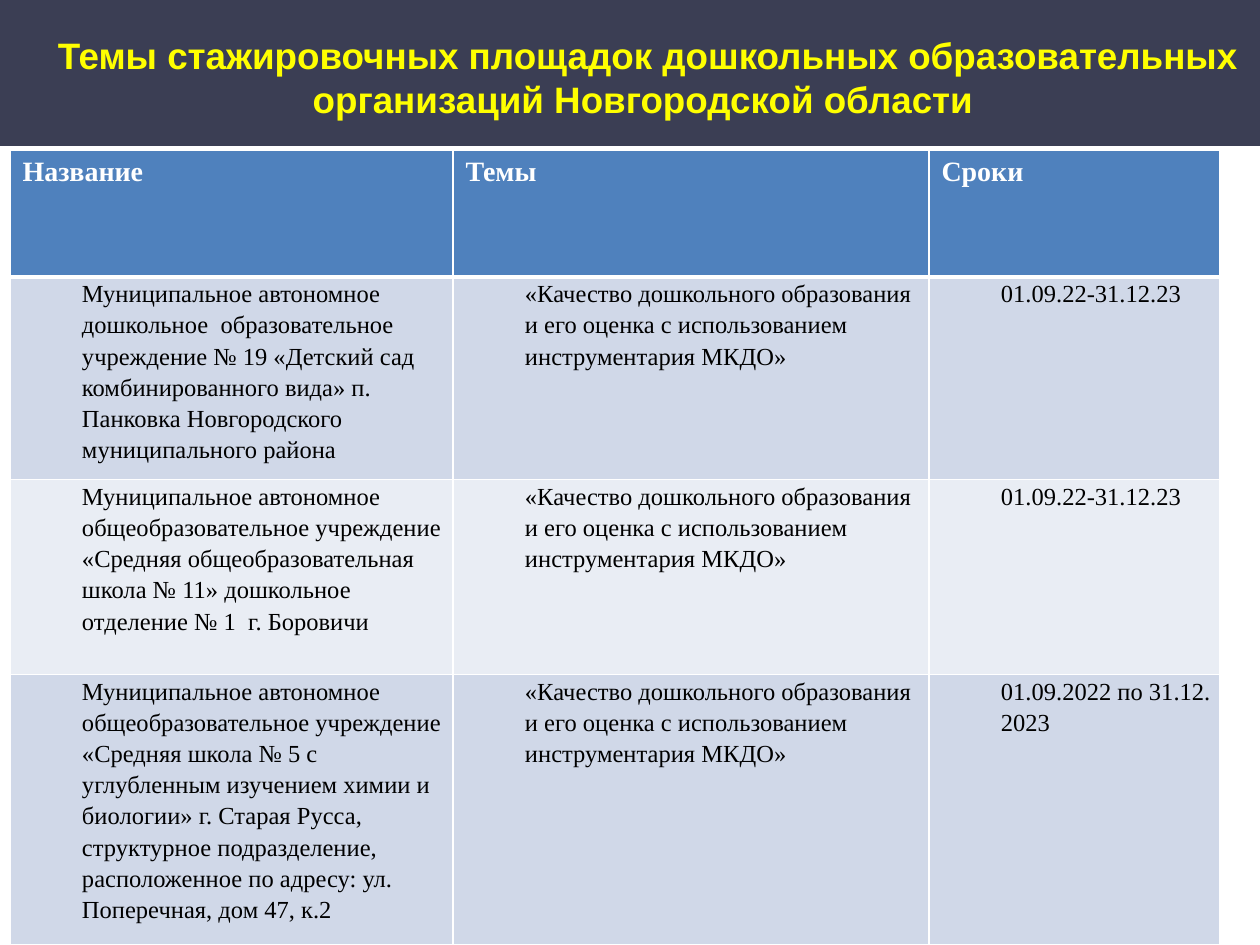
"""Build a slide with a title band and a table of preschool internship sites."""
import lxml.etree
import pptx
import pptx.dml.color
import pptx.enum.text
import pptx.oxml.ns
import pptx.util

PX = 914400 // 126
WHITE = "FFFFFF"
SERIF = "Times New Roman"
TOPIC = "«Качество дошкольного образования и его оценка с использованием инструментария МКДО»"
ROWS = [
    ("Название", "Темы", "Сроки"),
    (
        "Муниципальное автономное\nдошкольное  образовательное учреждение № 19 «Детский сад "
        "комбинированного вида» п. Панковка Новгородского муниципального района",
        TOPIC,
        "01.09.22-31.12.23",
    ),
    (
        "Муниципальное автономное общеобразовательное учреждение «Средняя общеобразовательная "
        "школа № 11» дошкольное отделение № 1  г. Боровичи",
        TOPIC,
        "01.09.22-31.12.23",
    ),
    (
        "Муниципальное автономное общеобразовательное учреждение «Средняя школа № 5 с "
        "углубленным изучением химии и биологии» г. Старая Русса, структурное подразделение, "
        "расположенное по адресу: ул. Поперечная, дом 47, к.2",
        TOPIC,
        "01.09.2022 по 31.12. 2023",
    ),
]
COLUMN_WIDTHS = [443, 476, 291]
ROW_HEIGHTS = [127, 195, 195, 247]
ROW_FILLS = ["4F81BD", "D0D8E8", "E9EDF4", "D0D8E8"]


def paint(color_format, color):
    color_format.rgb = pptx.dml.color.RGBColor.from_string(color)


def add_border(cell, side, points):
    qn = pptx.oxml.ns.qn
    properties = cell._tc.get_or_add_tcPr()
    line = lxml.etree.SubElement(properties, qn(f"a:ln{side}"), w=str(pptx.util.Pt(points)))
    fill = lxml.etree.SubElement(line, qn("a:solidFill"))
    lxml.etree.SubElement(fill, qn("a:srgbClr"), val=WHITE)


presentation = pptx.Presentation()
presentation.slide_width = 1260 * PX
presentation.slide_height = 945 * PX
slide = presentation.slides.add_slide(presentation.slide_layouts[6])

builder = slide.shapes.build_freeform(1260, 0, scale=PX)
builder.add_line_segments([(0, 0), (0, 146), (1260, 146)], close=True)
band = builder.convert_to_shape()
band.shadow.inherit = False
band.fill.solid()
paint(band.fill.fore_color, "3B3E54")
band.line.fill.background()

title = slide.shapes.add_textbox(54 * PX, 33 * PX, 1188 * PX, 89 * PX)
text_frame = title.text_frame
text_frame.word_wrap = True
text_frame.margin_left = text_frame.margin_right = 0
text_frame.margin_top = text_frame.margin_bottom = 0
text_frame.text = "Темы стажировочных площадок дошкольных образовательных организаций Новгородской области "
paragraph = text_frame.paragraphs[0]
paragraph.alignment = pptx.enum.text.PP_ALIGN.CENTER
font = paragraph.runs[0].font
font.name, font.size, font.bold = "Arial", pptx.util.Pt(21), True
paint(font.color, "FFFF00")

table = slide.shapes.add_table(
    len(ROWS), len(COLUMN_WIDTHS), 10 * PX, 150 * PX, sum(COLUMN_WIDTHS) * PX, sum(ROW_HEIGHTS) * PX
).table
for column, width in zip(table.columns, COLUMN_WIDTHS):
    column.width = width * PX

for row_index, texts in enumerate(ROWS):
    is_header = row_index == 0
    table.rows[row_index].height = ROW_HEIGHTS[row_index] * PX
    for column_index, text in enumerate(texts):
        cell = table.cell(row_index, column_index)
        for side in "LRTB":
            under_header = (row_index, side) in [(0, "B"), (1, "T")]
            add_border(cell, side, 3 if under_header else 1)
        cell.fill.solid()
        paint(cell.fill.fore_color, ROW_FILLS[row_index])
        cell.text_frame.text = text
        if not is_header:
            cell.margin_left = cell.margin_right = 9 * PX
            cell.margin_top = cell.margin_bottom = 0
        for paragraph in cell.text_frame.paragraphs:
            if not is_header:
                paragraph.line_spacing = 1.15
                paragraph_properties = paragraph._p.get_or_add_pPr()
                paragraph_properties.set("marL", str(63 * PX))
                paragraph_properties.set("indent", "0")
            font = paragraph.runs[0].font
            font.name, font.bold = SERIF, is_header
            font.size = pptx.util.Pt(16 if is_header else 14)
            paint(font.color, WHITE if is_header else "000000")

presentation.save("out.pptx")
